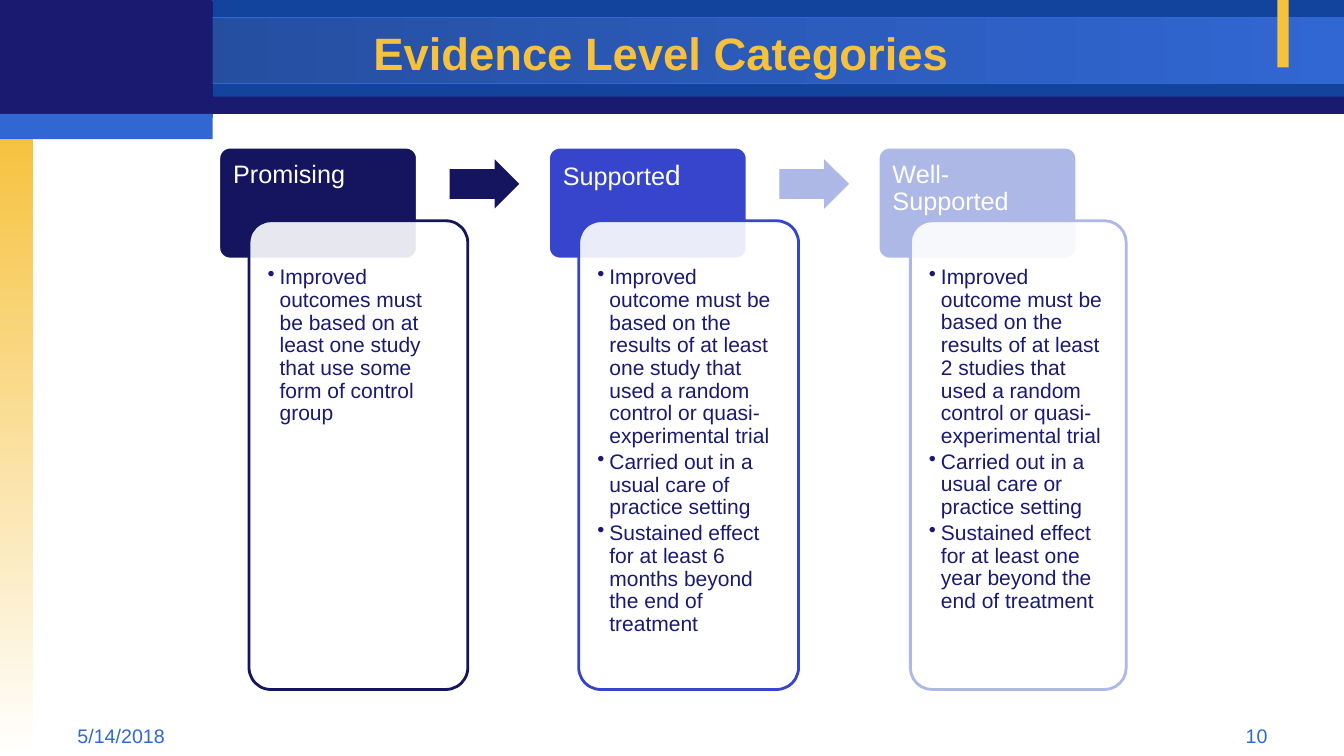
from pptx import Presentation
from pptx.dml.color import RGBColor
from pptx.enum.shapes import MSO_SHAPE
from pptx.enum.text import MSO_ANCHOR, MSO_AUTO_SIZE, PP_ALIGN
from pptx.oxml.ns import qn
from pptx.util import Inches, Pt
from lxml import etree

RECT = MSO_SHAPE.RECTANGLE
ROUNDED = MSO_SHAPE.ROUNDED_RECTANGLE
ARROW = MSO_SHAPE.RIGHT_ARROW
TOP, MIDDLE = MSO_ANCHOR.TOP, MSO_ANCHOR.MIDDLE
LEFT, CENTER, RIGHT = PP_ALIGN.LEFT, PP_ALIGN.CENTER, PP_ALIGN.RIGHT
NO_FIT = MSO_AUTO_SIZE.NONE

NAVY, BLUE, GOLD, WHITE = "1A1A70", "3167D3", "F6C13C", "FFFFFF"
COLUMN_STEP = 3.27

LEVELS = [
    ("14145F", [("Promising", 18)], 2.47, 2.17, [
        "Improved outcomes must be based on at least one study that use some "
        "form of control group",
    ]),
    ("3745CC", [("Supporte", 18), ("d", 20)], 5.74, 2.18, [
        "Improved outcome must be based on the results of at least one study "
        "that used a random control or quasi-experimental trial",
        "Carried out in a usual care of practice setting",
        "Sustained effect for at least 6 months beyond the end of treatment",
    ]),
    ("ADB8E6", [("Well-Supported", 18)], 9.03, 2.14, [
        "Improved outcome must be based on the results of at least 2 studies "
        "that used a random control or quasi-experimental trial",
        "Carried out in a usual care or practice setting",
        "Sustained effect for at least one year beyond the end of treatment",
    ]),
]


def rgb(value):
    return RGBColor.from_string(value)


def assign(target, values):
    for name, value in values.items():
        setattr(target, name, value)


class SlideBuilder:
    font = "Arial"

    def __init__(self, slide):
        self.slide = slide

    def shape(self, kind, box, fill, line=None, weight=2, adjust=(), opacity=None):
        shape = self.slide.shapes.add_shape(kind, *map(Inches, box))
        shape.shadow.inherit = False
        for index, value in enumerate(adjust):
            shape.adjustments[index] = value
        shape.fill.solid()
        shape.fill.fore_color.rgb = rgb(fill)
        if opacity:
            color = shape._element.spPr.find(qn("a:solidFill")).find(qn("a:srgbClr"))
            etree.SubElement(color, qn("a:alpha"), val=str(opacity * 1000))
        if line:
            shape.line.color.rgb = rgb(line)
            shape.line.width = Pt(weight)
        else:
            shape.line.fill.background()
        return shape

    def gradient(self, box, colors, angle, line=None):
        shape = self.shape(RECT, box, colors[0], line, 0.75)
        shape.fill.gradient()
        shape.fill.gradient_angle = angle
        for stop, color, position in zip(shape.fill.gradient_stops, colors, (0, 1)):
            stop.color.rgb = rgb(color)
            stop.position = position

    def text(self, shape, paragraphs, color, insets=(0.1, 0.05, 0.1, 0.05),
             anchor=TOP, bold=False, bullet=False, **spacing):
        frame = shape.text_frame
        sides = ("margin_left", "margin_top", "margin_right", "margin_bottom")
        assign(frame, dict(zip(sides, map(Inches, insets)), word_wrap=True,
                           auto_size=NO_FIT, vertical_anchor=anchor))
        for index, runs in enumerate(paragraphs):
            paragraph = frame.add_paragraph() if index else frame.paragraphs[0]
            if bullet:
                properties = paragraph._p.get_or_add_pPr()
                properties.set("marL", str(Inches(0.12)))
                properties.set("indent", str(-Inches(0.12)))
                etree.SubElement(properties, qn("a:buChar"), char="•")
            assign(paragraph, {"alignment": LEFT, **spacing})
            for words, size in runs:
                run = paragraph.add_run()
                run.text = words
                assign(run.font, {"name": self.font, "size": Pt(size), "bold": bold})
                run.font.color.rgb = rgb(color)

    def title(self, words, box):
        title = self.slide.shapes.title
        self.slide.shapes._spTree.append(title._element)
        assign(title, dict(zip(("left", "top", "width", "height"), map(Inches, box))))
        self.text(title, [[(words, 32.4)]], GOLD, anchor=MIDDLE, bold=True,
                  alignment=CENTER)

    def footer(self, words, left, alignment):
        box = self.slide.shapes.add_textbox(*map(Inches, (left, 7.13, 3.11, 0.27)))
        self.text(box, [[(words, 14)]], BLUE, alignment=alignment)

    def level(self, left, color, heading, card_left, card_width, criteria):
        header = self.shape(ROUNDED, (left, 1.46, 1.97, 1.11), color, WHITE,
                            adjust=[0.1])
        self.text(header, [heading], WHITE, (0.11, 0.11, 0.11, 0.07),
                  line_spacing=0.9)
        card = self.shape(ROUNDED, (card_left, 2.19, card_width, 4.65), WHITE, color,
                          adjust=[0.1], opacity=90)
        self.text(card, [[(criterion, 15)] for criterion in criteria], NAVY,
                  (0.12, 0.39, 0.12, 0.12), bullet=True, line_spacing=0.9,
                  space_after=Pt(2.25))

    def arrow(self, left, color):
        self.shape(ARROW, (left, 1.58, 0.69, 0.49), color, adjust=[0.6, 0.5])


def main():
    deck = Presentation()
    deck.slide_width, deck.slide_height = Inches(13.33), Inches(7.5)
    builder = SlideBuilder(deck.slides.add_slide(deck.slide_layouts[5]))

    builder.shape(RECT, (0, 0.01, 13.33, 1.12), NAVY)
    builder.shape(RECT, (2.11, 0, 11.22, 0.96), "12449E")
    builder.gradient((0, 0.17, 13.33, 0.66), ("234A97", BLUE), 0, BLUE)
    builder.gradient((0, 1.25, 0.33, 6.25), (GOLD, WHITE), 270)
    builder.shape(RECT, (12.67, 0, 0.11, 0.67), GOLD)
    builder.shape(RECT, (0, 0, 2.11, 1.17), NAVY)
    builder.shape(RECT, (0, 1.13, 2.11, 0.25), BLUE)
    builder.title("Evidence Level Categories", (1.94, 0.23, 9.23, 0.58))

    for index, level in enumerate(LEVELS):
        offset = index * COLUMN_STEP
        builder.level(2.17 + offset, *level)
        if index < len(LEVELS) - 1:
            arrow_color = LEVELS[index * 2][0]
            builder.arrow(4.46 + offset, arrow_color)

    builder.footer("5/14/2018", 0.67, LEFT)
    builder.footer("10", 9.56, RIGHT)
    deck.save("out.pptx")


if __name__ == "__main__":
    main()
